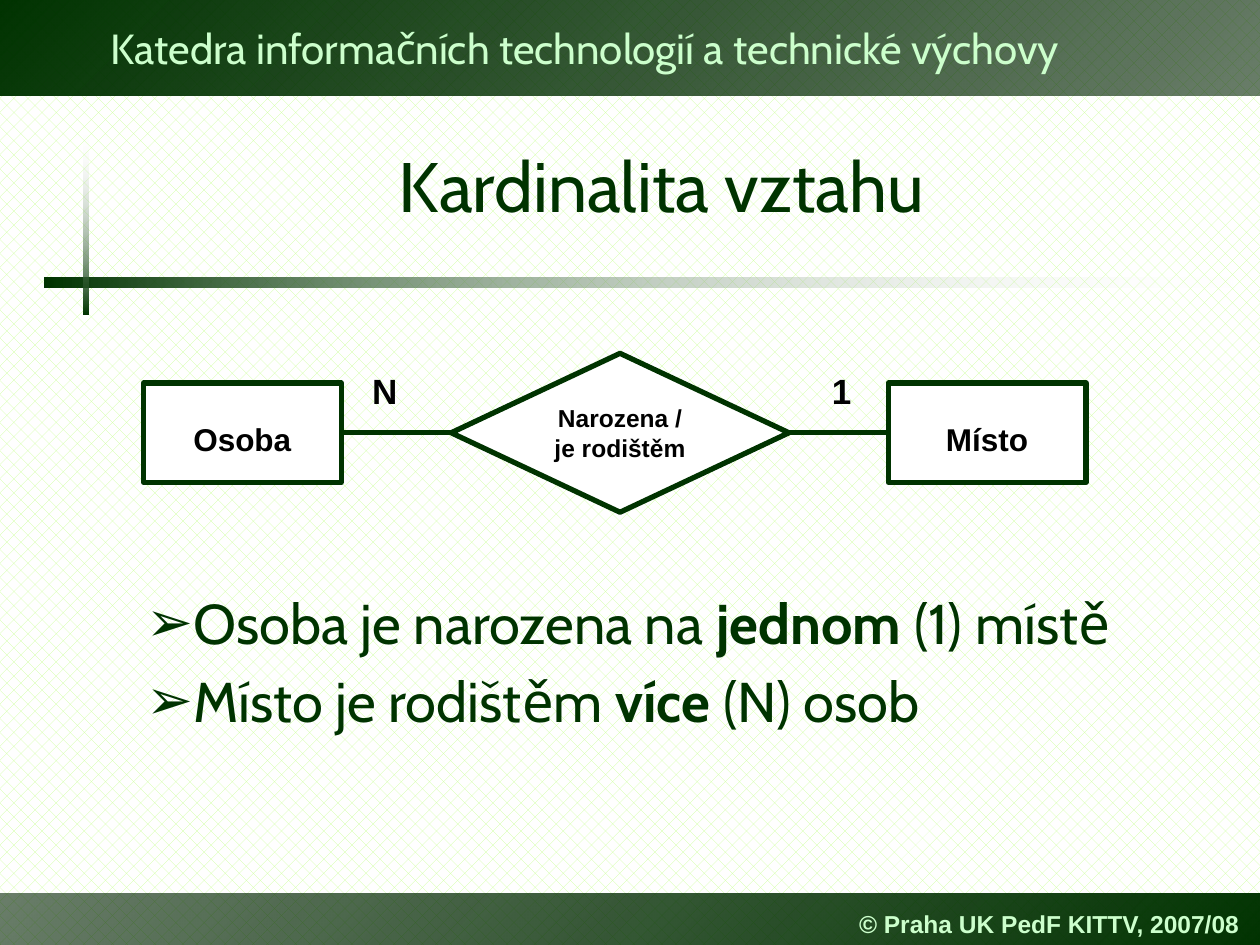
"""Build the slide on relationship cardinality."""
from lxml import etree
from pptx import Presentation, util as u
from pptx.dml.color import RGBColor
from pptx.enum import dml, shapes, text
from pptx.oxml.ns import qn

Pt = u.Pt
DARK = RGBColor(0x00, 0x33, 0x00)
DEEP = RGBColor(0x00, 0x24, 0x00)
MINT = RGBColor(0xCC, 0xFF, 0xCC)
LIME = RGBColor(0xCC, 0xFF, 0x99)
WHITE = RGBColor(0xFF, 0xFF, 0xFF)
BLACK = RGBColor(0, 0, 0)
RECT = shapes.MSO_SHAPE.RECTANGLE
DIAMOND = shapes.MSO_SHAPE.DIAMOND
LEFT, MID = text.PP_ALIGN.LEFT, text.PP_ALIGN.CENTER

TITLE = "Kardinalita vztahu"
HEAD = "Katedra informačních technologií a technické výchovy"
FOOT = "© Praha UK PedF KITTV, 2007/08"
ITEMS = [
    [("Osoba je narozena na ", False), ("jednom ", True), ("(1) místě", False)],
    [("Místo je rodištěm ", False), ("více", True), (" (N) osob", False)],
]
BANDS = [
    ((0, 510.5, 720, 31.7), 0, 45, (DEEP, 59), (DARK, 100)),
    ((0, 0, 720, 54.7), 180, 45, (DEEP, 59), (DARK, 100)),
    ((25.2, 158.4, 683.3, 5.8), 0, 0, (DARK, 100), (WHITE, 0)),
    ((-2.2, 126.7, 103, 2.9), 270, 0, (DARK, 100), (WHITE, 0)),
]
AXIS = 247.3
NODES = [
    ("Osoba", RECT, 82, 113, 56.7, 18, 7),
    ("Narozena /\vje rodištěm", DIAMOND, 257.8, 193, 90.8, 14, 0),
    ("Místo", RECT, 507.6, 113, 56.7, 18, 7),
]
LABELS = [("N", 205.2, 29.5), ("1", 468, 25.9)]


def style(para, size, color, face="Arial", bold=False, align=LEFT):
    para.alignment = align
    for run in para.runs:
        font = run.font
        font.size, font.name, font.bold = Pt(size), face, bold
        font.color.rgb = color


def place(shape, left, top, wide, high):
    shape.left, shape.top = Pt(left), Pt(top)
    shape.width, shape.height = Pt(wide), Pt(high)


def add_band(slide, box, turn, angle, *ends):
    band = slide.shapes.add_shape(RECT, *map(Pt, box))
    band.rotation = turn
    band.shadow.inherit = False
    band.line.fill.background()
    band.fill.gradient()
    band.fill.gradient_angle = -angle % 360
    for stop, (color, _) in zip(band.fill.gradient_stops, ends):
        stop.color.rgb = color
    tones = band._element.spPr.iter(qn("a:srgbClr"))
    for tone, (_, alpha) in zip(tones, ends):
        etree.SubElement(tone, qn("a:alpha"), val=str(alpha * 1000))


def add_label(slide, words, box, size, color, **look):
    label = slide.shapes.add_textbox(*map(Pt, box))
    label.text_frame.word_wrap = False
    label.text_frame.text = words
    style(label.text_frame.paragraphs[0], size, color, **look)
    return label


def add_node(slide, words, kind, left, wide, high, size, drop):
    box = (left, AXIS - high / 2, wide, high)
    node = slide.shapes.add_shape(kind, *map(Pt, box))
    node.shadow.inherit = False
    node.fill.solid()
    node.fill.fore_color.rgb = WHITE
    node.line.color.rgb, node.line.width = DARK, Pt(3)
    frame = node.text_frame
    frame.margin_left = frame.margin_right = frame.margin_bottom = 0
    frame.margin_top = Pt(drop)
    frame.vertical_anchor = text.MSO_ANCHOR.MIDDLE
    frame.text = words
    style(frame.paragraphs[0], size, BLACK, bold=True, align=MID)


def add_link(slide, start, end):
    link = slide.shapes.add_connector(
        shapes.MSO_CONNECTOR.STRAIGHT, Pt(start), Pt(AXIS), Pt(end), Pt(AXIS))
    link.line.color.rgb, link.line.width = DARK, Pt(3)
    etree.SubElement(link._element.spPr, qn("a:effectLst"))


def shade(label):
    fill = next(label._element.txBody.iter(qn("a:solidFill")))
    effect = etree.Element(qn("a:effectLst"))
    fill.addnext(effect)
    cast = etree.SubElement(
        effect, qn("a:outerShdw"), dist="35921", dir="2700000")
    etree.SubElement(cast, qn("a:srgbClr"), val=str(DEEP))


def fill_list(body):
    place(body, 76.3, 332.6, 643.7, 136.1)
    frame = body.text_frame
    frame.auto_size = text.MSO_AUTO_SIZE.NONE
    for num, item in enumerate(ITEMS):
        para = frame.add_paragraph() if num else frame.paragraphs[0]
        props = para._p.get_or_add_pPr()
        props.set("marL", str(Pt(27)))
        props.set("indent", str(Pt(-27)))
        tint = etree.SubElement(props, qn("a:buClr"))
        etree.SubElement(tint, qn("a:srgbClr"), val=str(DARK))
        etree.SubElement(props, qn("a:buChar"), char="➢")
        para.space_before = Pt(6.4 if num else 0)
        for words, _ in item:
            para.add_run().text = words
        style(para, 32, DARK, face="Cabin")
        for run, (_, bold) in zip(para.runs, item):
            run.font.bold = bold


def main():
    deck = Presentation()
    deck.slide_width, deck.slide_height = Pt(720), Pt(540)
    slide = deck.slides.add_slide(deck.slide_layouts[1])
    back = slide.background.fill
    back.patterned()
    back.pattern = dml.MSO_PATTERN.PERCENT_25
    back.fore_color.rgb, back.back_color.rgb = LIME, WHITE

    for band in BANDS:
        add_band(slide, *band)
    shade(add_label(slide, HEAD, (56.2, 9.4, 581, 36), 24, MINT, face="Cabin"))
    foot = add_label(slide, FOOT, (483.8, 516.2, 236.2, 23.8), 14, MINT, bold=True)
    foot.text_frame.vertical_anchor = text.MSO_ANCHOR.MIDDLE

    title = slide.shapes.title
    place(title, 54, 60.5, 648, 90)
    title.text_frame.text = TITLE
    title.text_frame.vertical_anchor = text.MSO_ANCHOR.MIDDLE
    style(title.text_frame.paragraphs[0], 40, DARK, face="Cabin", align=MID)

    for node in NODES:
        add_node(slide, *node)
    for one, two in zip(NODES, NODES[1:]):
        add_link(slide, one[2] + one[3], two[2])
    for words, left, wide in LABELS:
        add_label(slide, words, (left, 207.4, wide, 31.7), 20, BLACK,
                  bold=True, align=MID)
    fill_list(slide.placeholders[1])
    deck.save("out.pptx")


if __name__ == "__main__":
    main()
